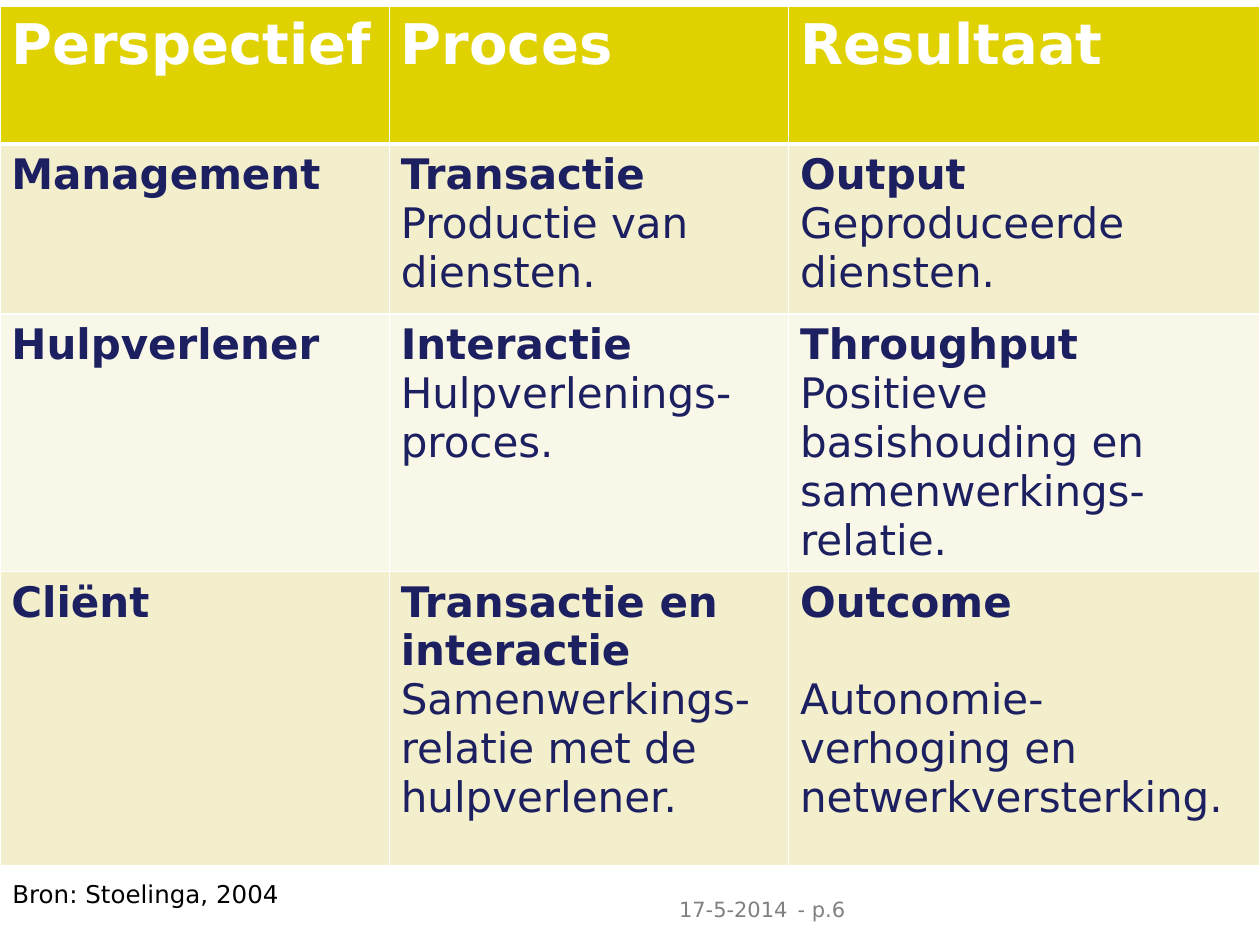
from lxml import etree
from pptx import Presentation
from pptx.dml.color import RGBColor
from pptx.enum.text import PP_ALIGN
from pptx.oxml.ns import qn
from pptx.util import Cm, Pt

LEFT, RIGHT = PP_ALIGN.LEFT, PP_ALIGN.RIGHT
FONT = "DejaVu Sans"
WHITE, NAVY, GREY, BLACK = "FFFFFF", "1C1F60", "808080", "000000"
HEADER_FILL = "E0D200"
BAND_FILLS = ["F3EECC", "F9F7E7"]

COLUMN_WIDTHS = [7.85, 8.05, 9.5]
ROW_HEIGHTS = [2.77, 3.43, 5.0, 5.94]
HEADINGS = ["Perspectief", "Proces", "Resultaat"]
# Each cell: bold term, explanation, points between the two
PERSPECTIVES = [
    [("Management", "", 0),
     ("Transactie", "Productie van diensten.", 0),
     ("Output", "Geproduceerde diensten.", 0)],
    [("Hulpverlener", "", 0),
     ("Interactie", "Hulpverlenings-proces.", 0),
     ("Throughput", "Positieve basishouding en samenwerkings-relatie.", 0)],
    [("Cliënt", "", 0),
     ("Transactie en interactie", "Samenwerkings-relatie met de hulpverlener.", 0),
     ("Outcome", "Autonomie-verhoging en netwerkversterking.", 28)],
]


def rgb(hex_colour):
    return RGBColor.from_string(hex_colour)


def add_run(paragraph, text, size, colour, bold=False):
    run = paragraph.add_run()
    run.text = text
    run.font.name = FONT
    run.font.size = Pt(size)
    run.font.bold = bold
    run.font.color.rgb = rgb(colour)


def set_borders(cell, widths):
    """Draw white cell borders; widths in points by side: L, R, T, B."""
    properties = cell._tc.get_or_add_tcPr()
    for side, width in widths.items():
        line = etree.SubElement(properties, qn(f"a:ln{side}"), w=str(Pt(width)))
        fill = etree.SubElement(line, qn("a:solidFill"))
        etree.SubElement(fill, qn("a:srgbClr"), val=WHITE)


def style_cell(cell, fill, top=1, bottom=1):
    set_borders(cell, {"L": 1, "R": 1, "T": top, "B": bottom})
    cell.fill.solid()
    cell.fill.fore_color.rgb = rgb(fill)
    cell.margin_left = cell.margin_right = Cm(0.23)
    cell.margin_top = cell.margin_bottom = Cm(0.13)


def add_perspective_table(slide, left, top):
    frame = slide.shapes.add_table(
        len(ROW_HEIGHTS), len(COLUMN_WIDTHS), Cm(left), Cm(top),
        Cm(sum(COLUMN_WIDTHS)), Cm(sum(ROW_HEIGHTS)))
    table = frame.table
    for column, width in zip(table.columns, COLUMN_WIDTHS):
        column.width = Cm(width)
    for row, height in zip(table.rows, ROW_HEIGHTS):
        row.height = Cm(height)

    for cell, heading in zip(table.rows[0].cells, HEADINGS):
        style_cell(cell, HEADER_FILL, bottom=3)
        add_run(cell.text_frame.paragraphs[0], heading, 32, WHITE, bold=True)

    for index, perspective in enumerate(PERSPECTIVES):
        cells = table.rows[index + 1].cells
        for cell, (term, explanation, gap) in zip(cells, perspective):
            style_cell(cell, BAND_FILLS[index % 2], top=1 if index else 3)
            add_run(cell.text_frame.paragraphs[0], term, 24, NAVY, bold=True)
            if explanation:
                paragraph = cell.text_frame.add_paragraph()
                paragraph.space_before = Pt(gap)
                add_run(paragraph, explanation, 24, NAVY)


def add_label(slide, box, text, size, colour, align=LEFT, margins=(0, 0)):
    label = slide.shapes.add_textbox(*(Cm(length) for length in box))
    frame = label.text_frame
    frame.word_wrap = True
    frame.margin_left = frame.margin_right = Cm(margins[0])
    frame.margin_top = frame.margin_bottom = Cm(margins[1])
    paragraph = frame.paragraphs[0]
    paragraph.alignment = align
    add_run(paragraph, text, size, colour)


def add_footer(slide, left, top):
    add_label(slide, (left, top, 2.7, 1), "17-5-2014", 12, GREY, RIGHT)
    add_label(slide, (left + 2.9, top, 2.34, 1), "- p.6", 12, GREY)


def main():
    presentation = Presentation()
    presentation.slide_width, presentation.slide_height = Cm(25.4), Cm(19.05)
    slide = presentation.slides.add_slide(presentation.slide_layouts[6])
    add_perspective_table(slide, 0, 0.13)
    add_footer(slide, 13.18, 18.08)
    add_label(slide, (0, 17.6, 22.86, 1.27), "Bron: Stoelinga, 2004", 14, BLACK,
              margins=(0.25, 0.13))
    presentation.save("out.pptx")


if __name__ == "__main__":
    main()
